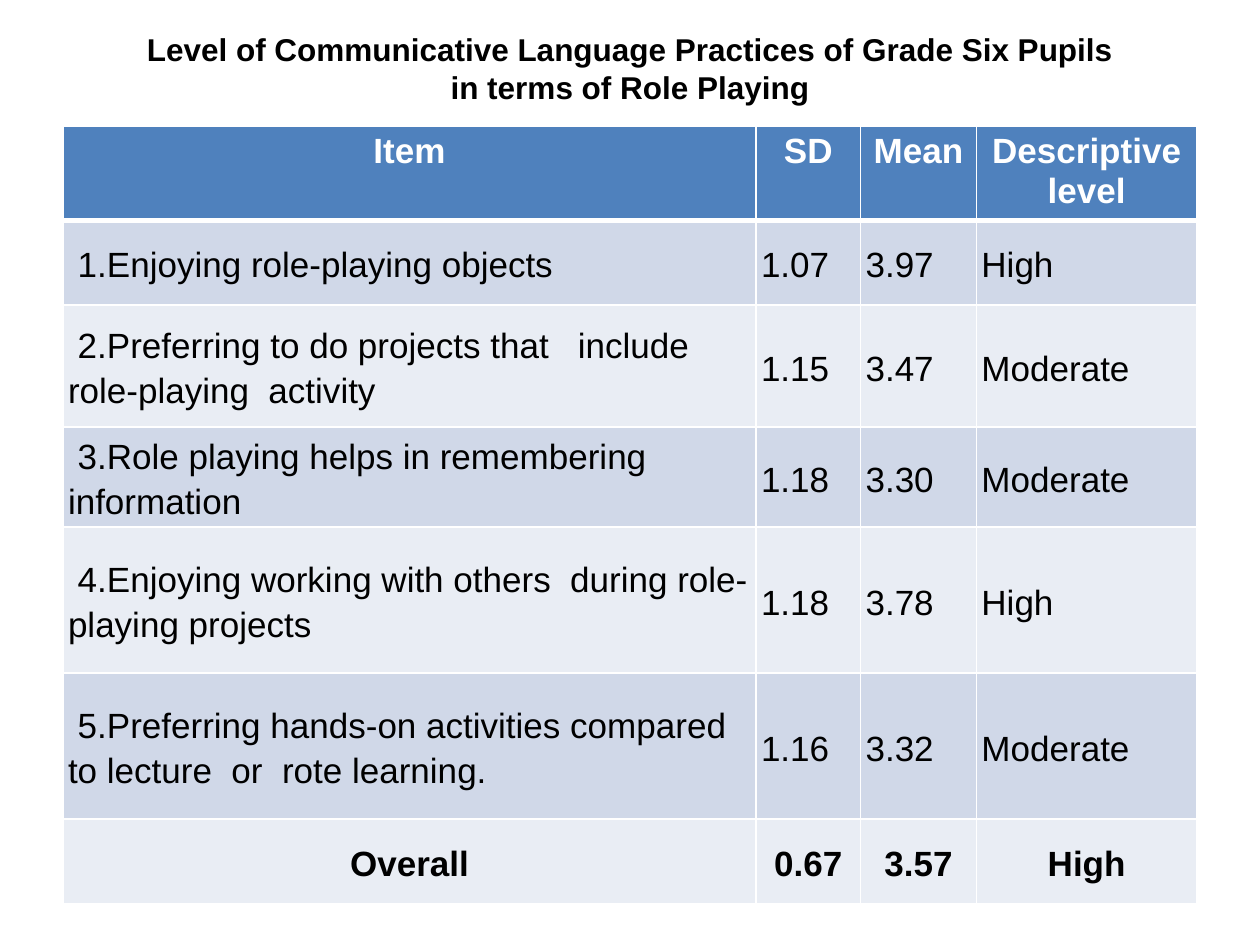
from lxml import etree
from pptx import Presentation
from pptx.dml.color import RGBColor
from pptx.enum import text
from pptx.oxml import ns
from pptx.util import Inches, Pt

TITLE = ["Level of Communicative Language Practices of Grade Six Pupils", "in terms of Role Playing"]
ROWS = [
    ("Item", "SD", "Mean", "Descriptive level"),
    (" 1.Enjoying role-playing objects", "1.07", "3.97", "High"),
    (" 2.Preferring to do projects that   include role-playing  activity", "1.15", "3.47", "Moderate"),
    (" 3.Role playing helps in remembering  information", "1.18", "3.30", "Moderate"),
    (" 4.Enjoying working with others  during role-playing projects", "1.18", "3.78", "High"),
    (" 5.Preferring hands-on activities compared to lecture  or  rote learning.", "1.16", "3.32", "Moderate"),
    ("Overall", "0.67", "3.57", "High"),
]
COLUMN_WIDTHS = [5.5, 0.83, 0.92, 1.75]
ROW_HEIGHTS = [0.75, 0.67, 0.97, 0.79, 1.16, 1.16, 0.67]
COLORS = {"header": "4F81BD", "odd": "D0D8E8", "even": "E9EDF4", "white": "FFFFFF", "black": "000000"}


def add_run(paragraph, words, size, color, bold):
    run = paragraph.add_run()
    run.text = words
    run.font.name = "Arial"
    run.font.size = Pt(size)
    run.font.bold = bold
    run.font.color.rgb = RGBColor.from_string(COLORS[color])


def set_borders(cell, top, bottom):
    properties = cell._tc.get_or_add_tcPr()
    widths = {"a:lnL": 1, "a:lnR": 1, "a:lnT": top, "a:lnB": bottom}
    for position, (tag, width) in enumerate(widths.items()):
        line = etree.Element(ns.qn(tag), w=str(Pt(width)))
        fill = etree.SubElement(line, ns.qn("a:solidFill"))
        etree.SubElement(fill, ns.qn("a:srgbClr"), val=COLORS["white"])
        properties.insert(position, line)


def format_cell(cell, words, row):
    header = row == 0
    emphasized = row in (0, len(ROWS) - 1)
    paragraph = cell.text_frame.paragraphs[0]
    paragraph.alignment = text.PP_ALIGN.CENTER if emphasized else text.PP_ALIGN.LEFT
    add_run(paragraph, words, 20, "white" if header else "black", emphasized)
    if not header:
        paragraph.line_spacing = 1.15
        cell.vertical_anchor = text.MSO_ANCHOR.MIDDLE
        cell.margin_left = cell.margin_right = Inches(0.04)
        cell.margin_top = cell.margin_bottom = Inches(0.04)
    cell.fill.solid()
    color = "header" if header else "odd" if row % 2 else "even"
    cell.fill.fore_color.rgb = RGBColor.from_string(COLORS[color])
    set_borders(cell, 3 if row == 1 else 1, 3 if header else 1)


def main():
    presentation = Presentation()
    presentation.slide_width, presentation.slide_height = Inches(10), Inches(7.5)
    slide = presentation.slides.add_slide(presentation.slide_layouts[5])

    title = slide.shapes.title
    title.left, title.top = Inches(0.5), Inches(0.2)
    title.width, title.height = Inches(9), Inches(0.68)
    frame = title.text_frame
    frame.word_wrap = True
    frame.auto_size = text.MSO_AUTO_SIZE.NONE
    frame.vertical_anchor = text.MSO_ANCHOR.MIDDLE
    frame.margin_top = frame.margin_bottom = 0
    paragraph = frame.paragraphs[0]
    paragraph.alignment = text.PP_ALIGN.CENTER
    for index, words in enumerate(TITLE):
        if index:
            paragraph.add_line_break()
        add_run(paragraph, words, 18, "black", True)

    table = slide.shapes.add_table(
        len(ROWS), len(COLUMN_WIDTHS), Inches(0.5), Inches(1),
        Inches(sum(COLUMN_WIDTHS)), Inches(sum(ROW_HEIGHTS)),
    ).table
    for column, width in zip(table.columns, COLUMN_WIDTHS):
        column.width = Inches(width)
    for row, (values, height) in enumerate(zip(ROWS, ROW_HEIGHTS)):
        table.rows[row].height = Inches(height)
        for column, words in enumerate(values):
            format_cell(table.cell(row, column), words, row)

    presentation.save("out.pptx")


if __name__ == "__main__":
    main()
